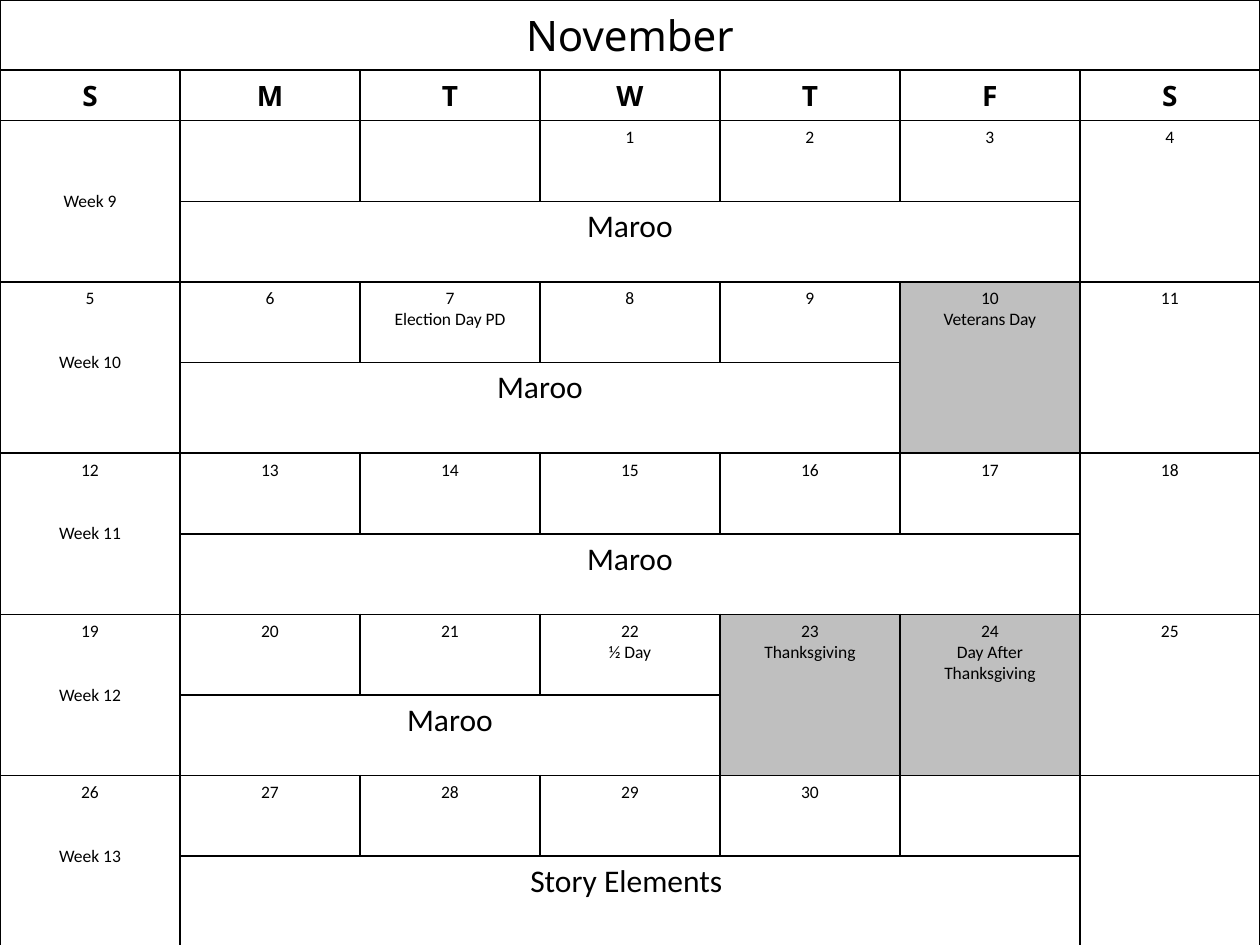
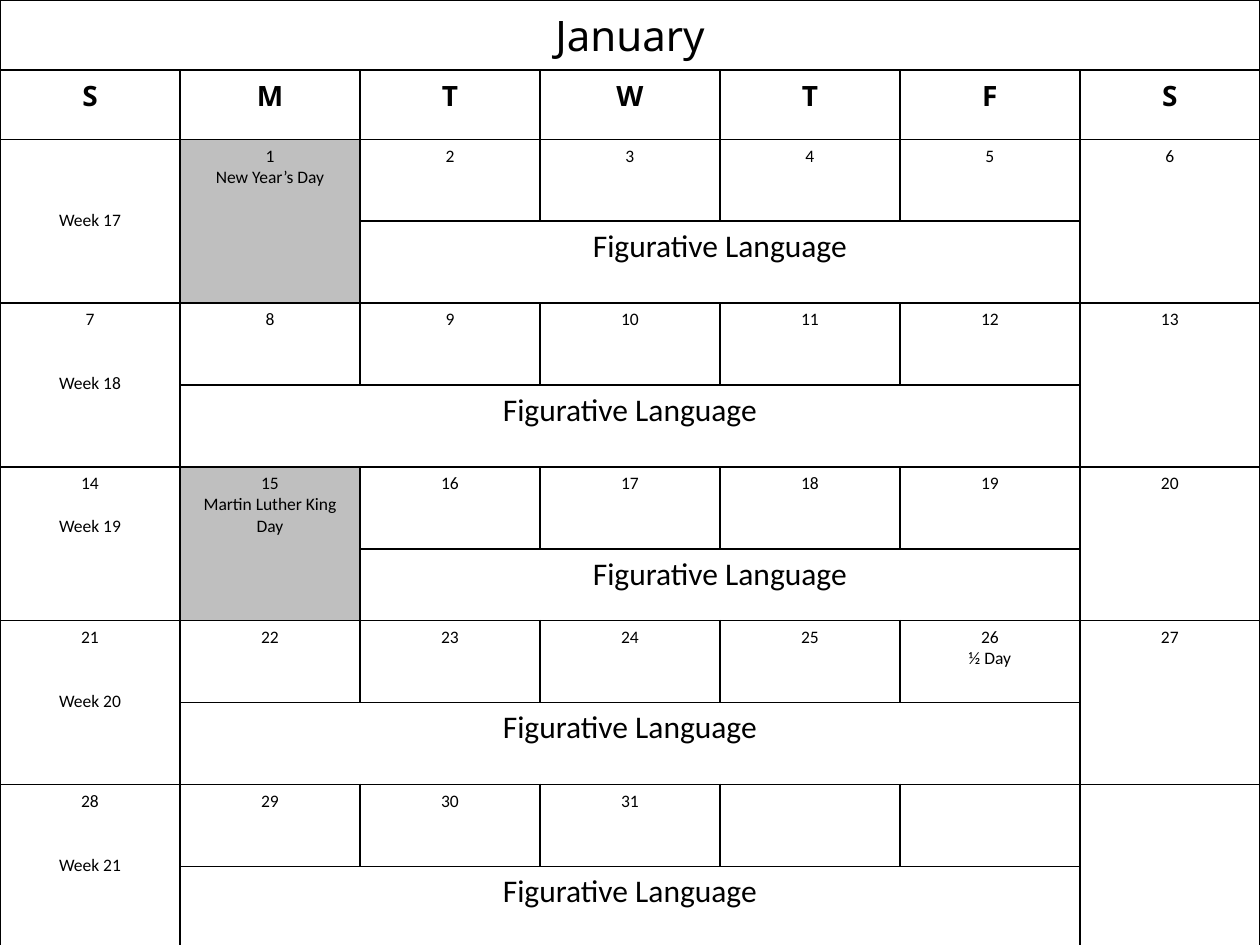
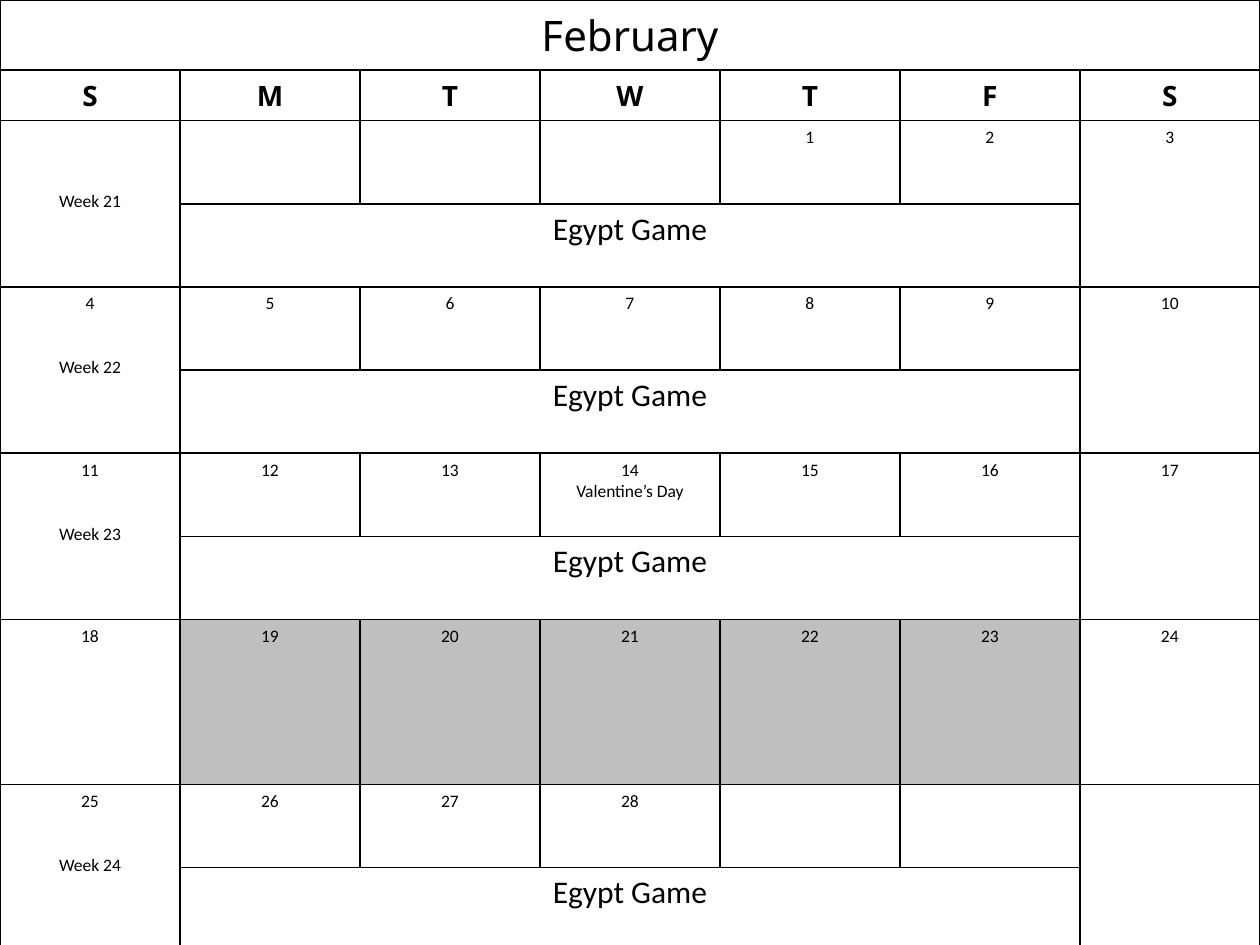
from dataclasses import dataclass, field

from lxml.etree import SubElement
from pptx import Presentation
from pptx.dml.color import RGBColor as RGB
from pptx.enum.text import MSO_ANCHOR as ANCHOR, PP_ALIGN as ALIGN
from pptx.oxml.ns import qn
from pptx.util import Inches, Pt


# Shared look
@dataclass(frozen=True)
class Theme:
    ink: str = "000000"
    paper: str = "FFFFFF"
    day_off: str = "BFBFBF"
    head_font: str = "Noto Sans"
    body_font: str = "Calibri"
    month_size: float = 24
    weekday_size: float = 16
    topic_size: float = 18
    day_size: float = 10
    day_line: float = 12.2
    margin: float = 0.05
    border: float = 1


THEME = Theme()
WEEKDAYS = "SMTWTFS"
SATURDAY = 6


# Calendar content
@dataclass
class Week:
    topic: str
    label: str = ""
    heights: tuple = (0.64, 0.64)
    gap: int = 2  # empty lines between the date and the label


@dataclass
class Month:
    name: str
    first_col: int
    days: int
    head_heights: tuple
    weeks: list
    notes: dict = field(default_factory=dict)
    off: tuple = ()

    def day_at(self, week, col):
        day = week * 7 + col - self.first_col + 1
        return day if 1 <= day <= self.days else None


NOV, JAN, FEB = (0.64, 0.64), (0.65, 0.65), (0.66, 0.66)
MONTHS = [
    Month("November", 3, 30, (0.53, 0.39),
          [Week("Maroo", "Week 9", NOV),
           Week("Maroo", "Week 10", (0.64, 0.72)),
           Week("Maroo", "Week 11", NOV),
           Week("Maroo", "Week 12", NOV),
           Week("Story Elements ", "Week 13", (0.64, 0.72))],
          {7: "Election Day PD", 10: "Veterans Day", 22: "½ Day",
           23: "Thanksgiving", 24: "Day After Thanksgiving"},
          (10, 23, 24)),
    Month("January", 1, 31, (0.52, 0.55),
          [Week("Figurative Language", "Week 17", JAN),
           Week("Figurative Language", "Week 18", JAN),
           Week("Figurative Language", "Week 19", (0.65, 0.57), gap=1),
           Week("Figurative Language", "Week 20", JAN),
           Week("Figurative Language", "Week 21", JAN)],
          {1: "New Year’s Day", 15: "Martin Luther King Day", 26: "½ Day"},
          (1, 15)),
    Month("February", 4, 28, (0.54, 0.39),
          [Week("Egypt Game", "Week 21", FEB),
           Week("Egypt Game", "Week 22", FEB),
           Week("Egypt Game", "Week 23", FEB),
           Week("", heights=(1.31,)),
           Week("Egypt Game", "Week 24", FEB)],
          {14: "Valentine’s Day"},
          tuple(range(19, 24))),
]


def fill_cell(cell, color):
    cell.fill.solid()
    cell.fill.fore_color.rgb = RGB.from_string(color)


def style_cell(cell):
    """Plain cell: white fill, thin black border on all sides."""
    fill_cell(cell, THEME.paper)
    cell.vertical_anchor = ANCHOR.TOP
    cell.margin_top = cell.margin_bottom = Inches(THEME.margin)
    tc_pr = cell._tc.get_or_add_tcPr()
    for i, side in enumerate(("a:lnL", "a:lnR", "a:lnT", "a:lnB")):
        ln = SubElement(tc_pr, qn(side), w=str(Pt(THEME.border)))
        line_fill = SubElement(ln, qn("a:solidFill"))
        SubElement(line_fill, qn("a:srgbClr"), val=THEME.ink)
        tc_pr.insert(i, ln)


def write(cell, text, size, font=THEME.body_font, bold=False):
    tf = cell.text_frame
    tf.text = text
    for p in tf.paragraphs:
        p.alignment = ALIGN.CENTER
        for r in p.runs:
            r.font.size = Pt(size)
            r.font.name = font
            r.font.bold = bold
            r.font.color.rgb = RGB.from_string(THEME.ink)


def write_day(cell, lines, gap=0):
    """Date with an optional second line, set off by gap empty lines."""
    shown = [line for line in lines if line]
    if not shown:
        return
    write(cell, "\n".join(shown), THEME.day_size)
    if len(shown) == 2:
        cell.text_frame.paragraphs[1].space_before = Pt(gap * THEME.day_line)
    elif not lines[0]:
        cell.margin_top = Inches(THEME.margin) + Pt((gap + 1) * THEME.day_line)


def add_week(tbl, top, month, number):
    week = month.weeks[number]
    bottom = top + len(week.heights) - 1
    topic_cols = []
    for col in range(7):
        cell = tbl.cell(top, col)
        day = month.day_at(number, col)
        date = str(day) if day else ""
        if col == 0:
            write_day(cell, (date, week.label), week.gap)
        else:
            write_day(cell, (date, month.notes.get(day, "")))
        if day in month.off:
            fill_cell(cell, THEME.day_off)
        elif 0 < col < SATURDAY:
            topic_cols.append(col)
            continue
        if bottom > top:
            cell.merge(tbl.cell(bottom, col))
    # Topic bar under the school days
    if topic_cols:
        bar = tbl.cell(bottom, topic_cols[0])
        bar.merge(tbl.cell(bottom, topic_cols[-1]))
        write(bar, week.topic, THEME.topic_size)


def add_month(prs, month):
    s = prs.slides.add_slide(prs.slide_layouts[6])
    heights = [*month.head_heights, *(h for w in month.weeks for h in w.heights)]
    tbl = s.shapes.add_table(len(heights), 7, 0, 0,
                             prs.slide_width, prs.slide_height).table
    tbl.first_row = tbl.horz_banding = False
    for row, height in zip(tbl.rows, heights):
        row.height = Inches(height)
    for cell in tbl.iter_cells():
        style_cell(cell)

    # Month name and weekday heads
    title = tbl.cell(0, 0)
    title.merge(tbl.cell(0, SATURDAY))
    write(title, month.name, THEME.month_size, THEME.head_font)
    for col, letter in enumerate(WEEKDAYS):
        write(tbl.cell(1, col), letter, THEME.weekday_size, THEME.head_font, True)

    # Weeks
    top = len(month.head_heights)
    for number, week in enumerate(month.weeks):
        add_week(tbl, top, month, number)
        top += len(week.heights)


def main():
    prs = Presentation()
    prs.slide_width, prs.slide_height = Inches(10), Inches(7.5)
    for month in MONTHS:
        add_month(prs, month)
    prs.save("out.pptx")


if __name__ == "__main__":
    main()
